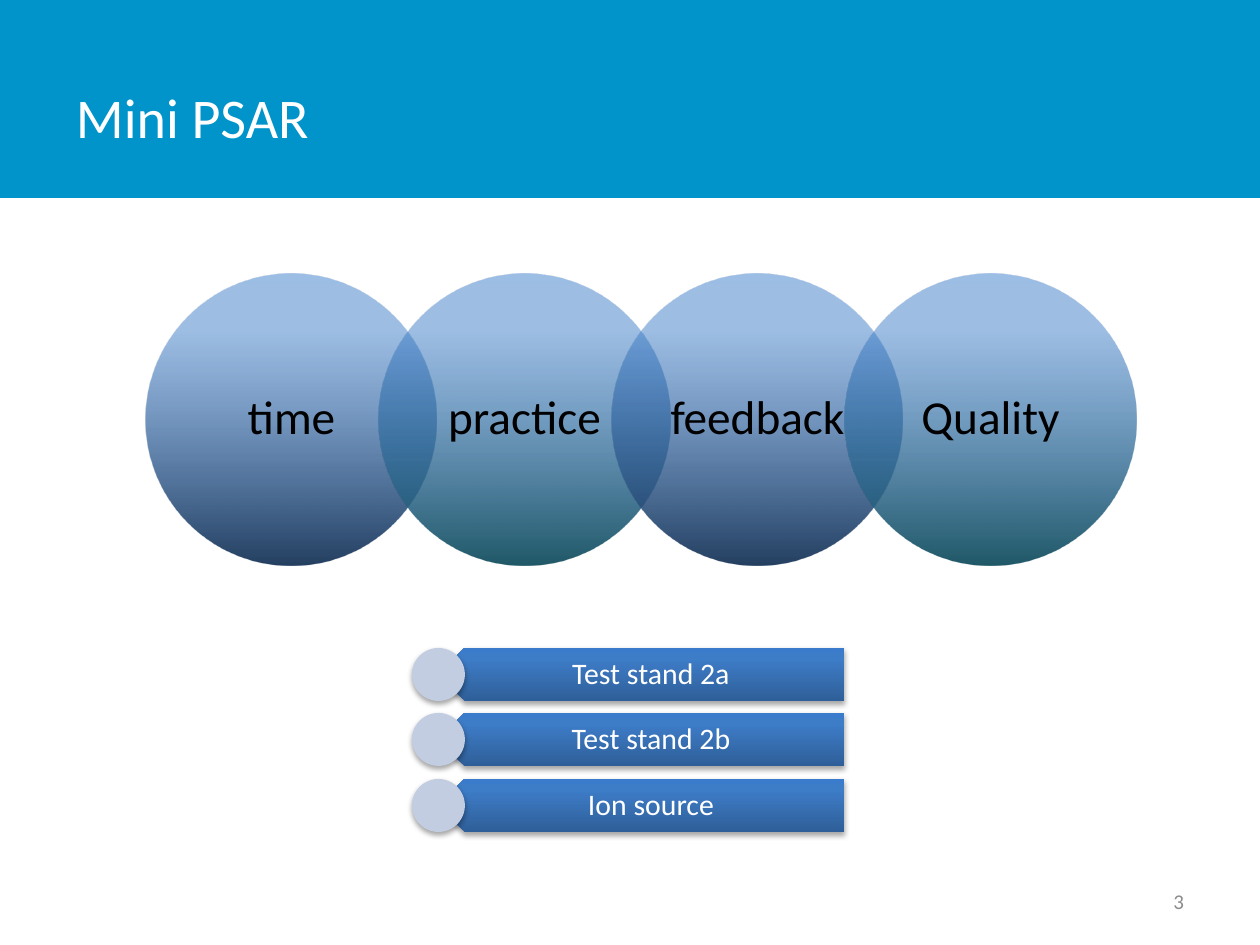
import pptx
import pptx.dml.color
import pptx.enum.shapes
import pptx.enum.text
import pptx.oxml
import pptx.oxml.ns
import pptx.util

PX = 914400 / 126
COLORS = {
    "banner": "0094CA", "white": "FFFFFF", "black": "000000", "number": "8C8C8C",
    "navy": "254061", "teal": "215968", "plate": "2F5F99",
    "middle": "3D7CC7", "light": "3A7CCB", "dot": "C2CDE1",
}
SHAPE = pptx.enum.shapes.MSO_SHAPE
ALIGN = pptx.enum.text.PP_ALIGN
NS = pptx.oxml.ns.nsdecls("a")


def add_text(shapes, text, box, size, color, align, insets=(13, 6, 13, 6), **paragraph):
    tb = shapes.add_textbox(*[round(v * PX) for v in box])
    tf = tb.text_frame
    tf.word_wrap = False
    tf.vertical_anchor = pptx.enum.text.MSO_ANCHOR.MIDDLE
    for side, inset in zip(("left", "top", "right", "bottom"), insets):
        setattr(tf, f"margin_{side}", round(inset * PX))
    p = tf.paragraphs[0]
    for name, value in {"alignment": align, **paragraph}.items():
        setattr(p, name, value)
    r = p.add_run()
    r.text = text
    for name, value in {"name": "Calibri", "size": pptx.util.Pt(size)}.items():
        setattr(r.font, name, value)
    r.font.color.rgb = pptx.dml.color.RGBColor.from_string(COLORS[color])


def add_filled(shapes, kind, box, color, light_alpha=None):
    """Add a borderless shape: solid, or fading up to blue when light_alpha (%) is given."""
    sp = shapes.add_shape(kind, *[round(v * PX) for v in box])
    sp.shadow.inherit = False
    sp.line.fill.background()
    if light_alpha is None:
        sp.fill.solid()
        sp.fill.fore_color.rgb = pptx.dml.color.RGBColor.from_string(COLORS[color])
        return sp
    sp.fill.background()
    stops = "".join(
        f'<a:gs pos="{pos}000"><a:srgbClr val="{COLORS[name]}">'
        f'<a:alpha val="{alpha}000"/></a:srgbClr></a:gs>'
        for pos, name, alpha in ((0, color, 100), (80, "middle", light_alpha),
                                 (100, "light", light_alpha)))
    gradient = pptx.oxml.parse_xml(
        f'<a:gradFill {NS} rotWithShape="0"><a:gsLst>{stops}</a:gsLst>'
        '<a:lin ang="16200000" scaled="0"/></a:gradFill>')
    spPr = sp.element.spPr
    spPr.replace(spPr.find(pptx.oxml.ns.qn("a:noFill")), gradient)
    return sp


prs = pptx.Presentation()
prs.slide_width = round(1260 * PX)
prs.slide_height = round(945 * PX)
s = prs.slides.add_slide(prs.slide_layouts[6])

# Banner, title and slide number
add_filled(s.shapes, SHAPE.RECTANGLE, (0, 0, 1260, 198), "banner")
add_text(s.shapes, "Mini PSAR", (63, 38, 984, 157), 32, "white", ALIGN.LEFT)
add_text(s.shapes, "3", (903, 876, 294, 50), 12, "number", ALIGN.RIGHT)

# Overlapping circles
circles = s.shapes.add_group_shape().shapes
for i, label in enumerate(("time", "practice", "feedback", "Quality")):
    x = 146 + 233 * i
    add_filled(circles, SHAPE.OVAL, (x, 274, 291, 291), ("navy", "teal")[i % 2], 50)
    add_text(circles, label, (x + 42, 316, 207, 207), 27, "black", ALIGN.CENTER,
             (16, 5, 16, 5), line_spacing=0.9)

# List of test places
rows = s.shapes.add_group_shape().shapes
for y, label in zip((648, 713, 779), ("Test stand 2a", "Test stand 2b", "Ion source")):
    plate = add_filled(rows, SHAPE.PENTAGON, (438, y, 406, 53), "plate", 100)
    plate.rotation = 180
    add_text(rows, label, (451, y, 393, 53), 17, "white", ALIGN.CENTER,
             (23, 9, 16, 9), line_spacing=0.9)
    dot = add_filled(rows, SHAPE.OVAL, (412, y, 53, 53), "dot")
    for sp in (plate, dot):
        sp.element.spPr.find(pptx.oxml.ns.qn("a:effectLst")).append(pptx.oxml.parse_xml(
            f'<a:outerShdw {NS} blurRad="39400" dist="22900" dir="5400000" rotWithShape="0">'
            f'<a:srgbClr val="{COLORS["black"]}"><a:alpha val="35000"/></a:srgbClr>'
            '</a:outerShdw>'))

prs.save("out.pptx")
